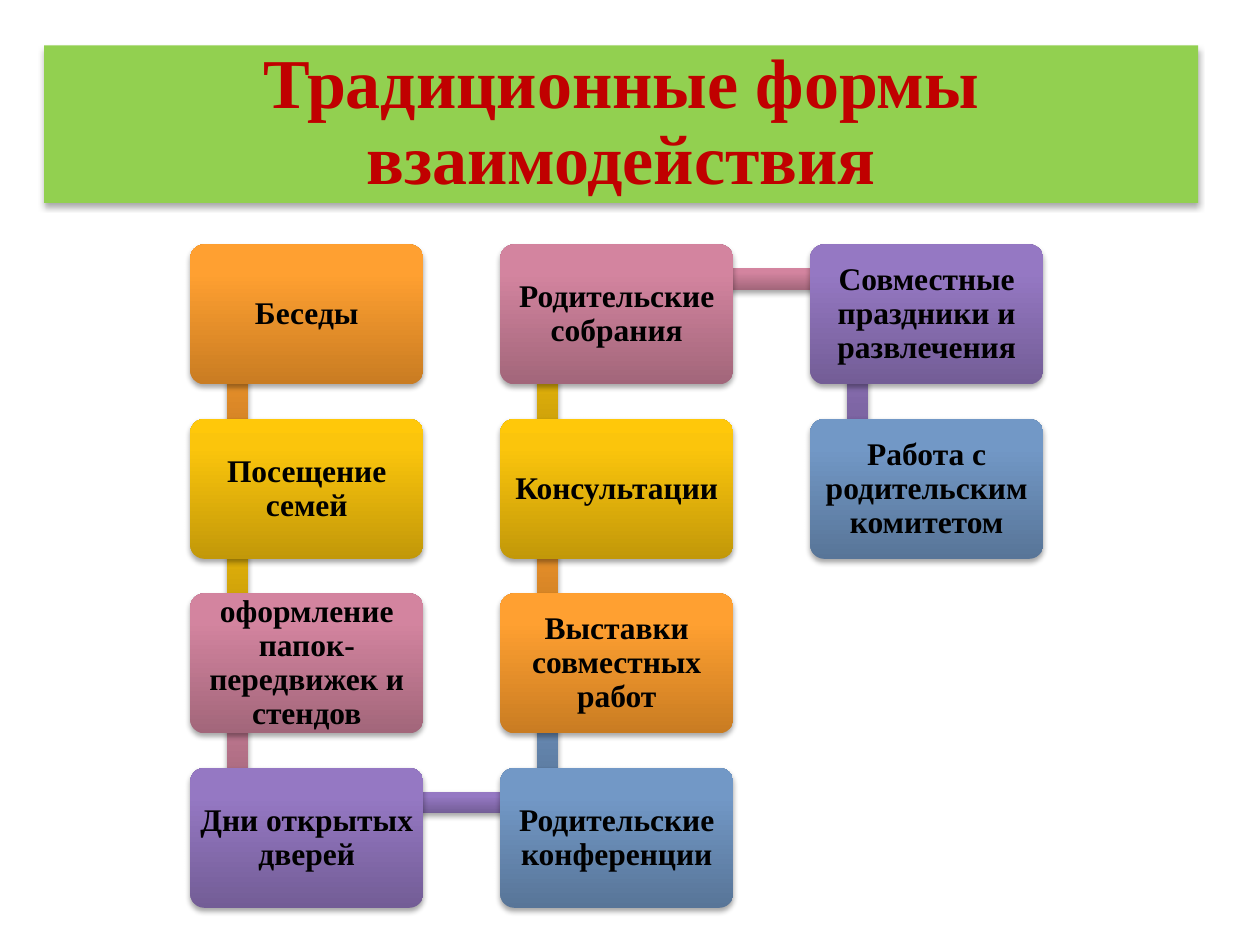
import copy
import itertools

import lxml.etree
import pptx
import pptx.dml.color
import pptx.enum.shapes
import pptx.enum.text
import pptx.oxml.ns
import pptx.util

Inches = pptx.util.Inches
Pt = pptx.util.Pt
SHAPES = pptx.enum.shapes.MSO_SHAPE

FONT = "Times New Roman"
# Each gradient runs from the bottom up, with stops at 0, 80 and 100 %
ORANGE = ("C97C22", "FFA031", "FFA133")
YELLOW = ("C29809", "FBC50C", "FFC80A")
PINK = ("A2667A", "D3849F", "D5849F")
PURPLE = ("735D96", "9578C3", "9677C5")
BLUE = ("587598", "7298C6", "7199C8")

# In reading order: down the first column, up the second, down the third
FORMS = [
    "Беседы",
    "Посещение семей",
    "оформление папок-передвижек и стендов",
    "Дни открытых дверей",
    "Родительские конференции",
    "Выставки совместных работ",
    "Консультации",
    "Родительские собрания",
    "Совместные праздники и развлечения",
    "Работа с родительским комитетом",
]
COLOURS = itertools.cycle([ORANGE, YELLOW, PINK, PURPLE, BLUE])
ROWS = 4
BOX_WIDTH, BOX_HEIGHT = Inches(1.85), Inches(1.11)
COLUMN_STEP, ROW_STEP = Inches(2.46), Inches(1.385)
BAR = Inches(0.17)


def colour(hex_string):
    return pptx.dml.color.RGBColor.from_string(hex_string)


def add_shadow(shape, blur, distance, opacity):
    """Give the shape a soft black shadow straight below it."""
    shape.shadow.inherit = False
    effects = shape._element.spPr.find(pptx.oxml.ns.qn("a:effectLst"))
    outer = lxml.etree.SubElement(
        effects, pptx.oxml.ns.qn("a:outerShdw"), blurRad=str(Pt(blur)),
        dist=str(Pt(distance)), dir="5400000", rotWithShape="0")
    black = lxml.etree.SubElement(outer, pptx.oxml.ns.qn("a:srgbClr"), val="000000")
    lxml.etree.SubElement(black, pptx.oxml.ns.qn("a:alpha"), val=str(opacity * 1000))


def fill_gradient(shape, hexes):
    shape.fill.gradient()
    shape.fill.gradient_angle = 90
    stop_list = shape._element.spPr.find(".//" + pptx.oxml.ns.qn("a:gsLst"))
    stop_list.append(copy.deepcopy(stop_list[-1]))
    for stop, position, hex_string in zip(shape.fill.gradient_stops, (0, 0.8, 1), hexes):
        stop.position = position
        stop.color.rgb = colour(hex_string)


def write(frame, text, size, hex_string):
    frame.word_wrap = True
    frame.auto_size = pptx.enum.text.MSO_AUTO_SIZE.NONE
    frame.vertical_anchor = pptx.enum.text.MSO_ANCHOR.MIDDLE
    para = frame.paragraphs[0]
    para.text = text
    para.alignment = pptx.enum.text.PP_ALIGN.CENTER
    para.line_spacing = 0.9
    para.font.name = FONT
    para.font.size = Pt(size)
    para.font.bold = True
    para.font.color.rgb = colour(hex_string)


def add_block(page, kind, left, top, width, height, hexes):
    block = page.shapes.add_shape(kind, left, top, width, height)
    fill_gradient(block, hexes)
    block.line.fill.background()
    add_shadow(block, 3.1, 1.8, 35)
    return block


def add_title(page, left, top, width, height):
    title = page.shapes.title
    title.left, title.top, title.width, title.height = left, top, width, height
    title.fill.solid()
    title.fill.fore_color.rgb = colour("92D050")
    add_shadow(title, 3.5, 2.2, 32)
    write(title.text_frame, "Традиционные формы взаимодействия", 40, "C00000")


def snake_cell(index):
    """Column and row of a box; every second column runs upwards."""
    column, step = divmod(index, ROWS)
    return column, ROWS - 1 - step if column % 2 else step


def add_snake(page, left, top):
    """Boxes in a winding chain, each with a bar leading to the next."""
    for index, (text, hexes) in enumerate(zip(FORMS, COLOURS)):
        column, row = snake_cell(index)
        x, y = left + column * COLUMN_STEP, top + row * ROW_STEP
        if index + 1 < len(FORMS):
            next_column, next_row = snake_cell(index + 1)
            if next_column > column:
                add_block(page, SHAPES.RECTANGLE, x + Inches(0.38), y + Inches(0.19),
                          COLUMN_STEP, BAR, hexes)
            else:
                upper = top + min(row, next_row) * ROW_STEP
                add_block(page, SHAPES.RECTANGLE, x + Inches(0.29), upper + Inches(0.28),
                          BAR, ROW_STEP, hexes)
        box = add_block(page, SHAPES.ROUNDED_RECTANGLE, x, y, BOX_WIDTH, BOX_HEIGHT, hexes)
        box.adjustments[0] = 0.1
        frame = box.text_frame
        frame.margin_left = frame.margin_right = Inches(0.04)
        frame.margin_top = frame.margin_bottom = Inches(0.04)
        write(frame, text, 18, "000000")


def main():
    deck = pptx.Presentation()
    deck.slide_width, deck.slide_height = Inches(10), Inches(7.5)
    page = deck.slides.add_slide(deck.slide_layouts[5])
    add_title(page, Inches(0.35), Inches(0.36), Inches(9.16), Inches(1.25))
    add_snake(page, Inches(1.51), Inches(1.94))
    deck.save("out.pptx")


if __name__ == "__main__":
    main()
